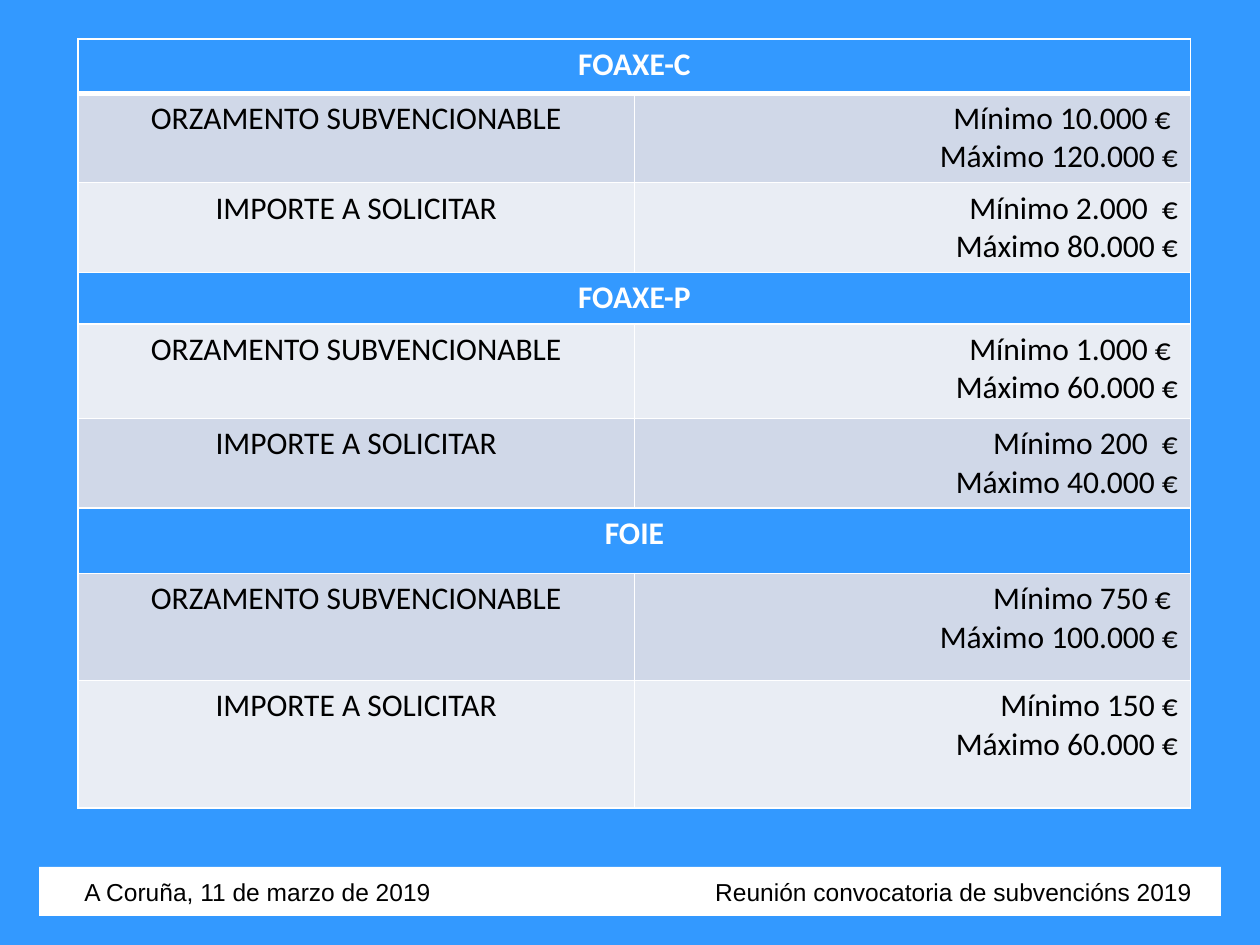
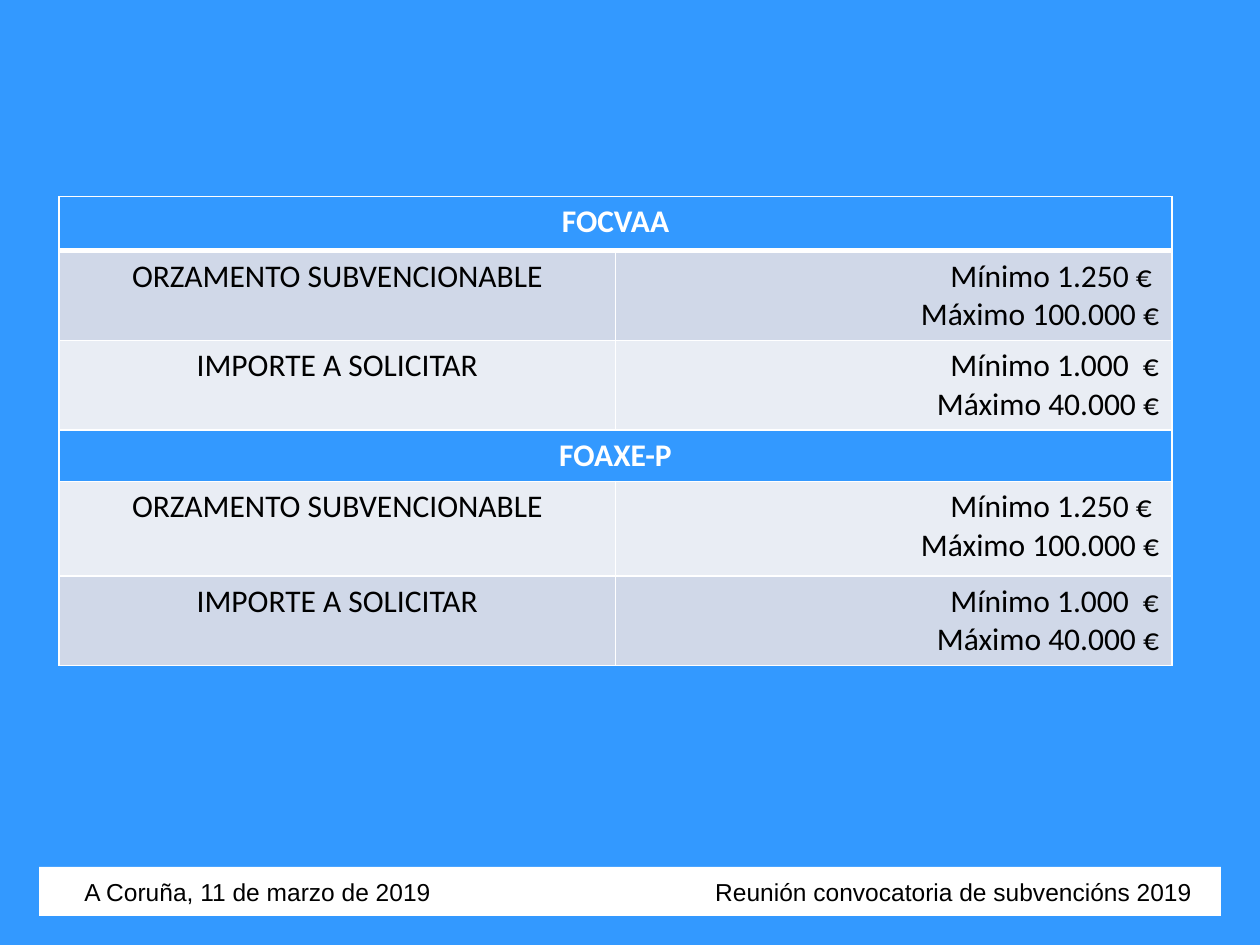
from lxml import etree
from pptx import Presentation
from pptx.dml.color import RGBColor
from pptx.enum.shapes import MSO_SHAPE
from pptx.enum.text import MSO_ANCHOR, PP_ALIGN
from pptx.oxml.ns import qn
from pptx.util import Inches, Pt

LEFT, CENTER, RIGHT = PP_ALIGN.LEFT, PP_ALIGN.CENTER, PP_ALIGN.RIGHT
MIDDLE = MSO_ANCHOR.MIDDLE
RECTANGLE = MSO_SHAPE.RECTANGLE

COLORS = {"blue": "3399FF", "white": "FFFFFF", "black": "000000",
          "dark_band": "D0D8E8", "light_band": "E9EDF4"}

BUDGET = "ORZAMENTO SUBVENCIONABLE"
REQUEST = "IMPORTE A SOLICITAR"
FOOTER = ("A Coruña, 11 de marzo de 2019", "Reunión convocatoria de subvencións 2019")

# Each programme: name, limits of the budget, limits of the amount requested
TABLES = [
    {"at": (0.62, 0.31),
     "heights": [0.43, 0.71, 0.71, 0.41, 0.75, 0.71, 0.52, 0.85, 1.01],
     "programmes": [
         ("FOAXE-C", ["Mínimo 10.000 € ", "Máximo 120.000 €"],
          ["Mínimo 2.000  €", "Máximo 80.000 €"]),
         ("FOAXE-P", ["Mínimo 1.000 € ", "Máximo 60.000 €"],
          ["Mínimo 200  €", "Máximo 40.000 €"]),
         ("FOIE", ["Mínimo 750 € ", "Máximo 100.000 €"],
          ["Mínimo 150 €", "Máximo 60.000 €"]),
     ]},
    {"at": (0.47, 1.56),
     "heights": [0.43, 0.71, 0.71, 0.41, 0.75, 0.71],
     "programmes": [
         (name, ["Mínimo 1.250 € ", "Máximo 100.000 €"],
          ["Mínimo 1.000  €", "Máximo 40.000 €"])
         for name in ("FOCVAA", "FOAXE-P")
     ]},
]

SLIDE_WIDTH, SLIDE_HEIGHT = 10, 7.5
TABLE_WIDTH = 8.83
FOOTER_MARGIN, FOOTER_TOP, FOOTER_HEIGHT = 0.31, 6.88, 0.39
FOOTER_INSET, FOOTER_TAB = 0.36, 8.79


def color(name):
    return RGBColor.from_string(COLORS[name])


def paint(fill, name):
    fill.solid()
    fill.fore_color.rgb = color(name)


def write(frame, lines, font="Calibri", size=18, ink="black", bold=False, align=LEFT):
    for index, line in enumerate(lines):
        para = frame.paragraphs[0] if index == 0 else frame.add_paragraph()
        para.alignment = align
        span = para.add_run()
        span.text = line
        span.font.name = font
        span.font.size = Pt(size)
        span.font.bold = bold
        span.font.color.rgb = color(ink)


def set_borders(cell, top=1, bottom=1):
    properties = cell._tc.get_or_add_tcPr()
    widths = {"a:lnL": 1, "a:lnR": 1, "a:lnT": top, "a:lnB": bottom}
    for index, (side, width) in enumerate(widths.items()):
        line = etree.Element(qn(side), w=str(Pt(width)))
        fill = etree.SubElement(line, qn("a:solidFill"))
        etree.SubElement(fill, qn("a:srgbClr"), val=COLORS["white"])
        properties.insert(index, line)


def add_limits_table(page, at, heights, programmes):
    rows = []
    for name, budget, request in programmes:
        rows += [(name, None), (BUDGET, budget), (REQUEST, request)]

    left, top = at
    table = page.shapes.add_table(
        len(rows), 2, Inches(left), Inches(top),
        Inches(TABLE_WIDTH), Inches(sum(heights))).table
    for column in table.columns:
        column.width = Inches(TABLE_WIDTH / 2)

    for number, (label, limits) in enumerate(rows):
        table.rows[number].height = Inches(heights[number])
        label_cell, limits_cell = table.cell(number, 0), table.cell(number, 1)
        band = "dark_band" if number % 2 else "light_band"
        for cell in (label_cell, limits_cell):
            paint(cell.fill, band if limits else "blue")
            set_borders(cell, top=3 if number == 1 else 1,
                        bottom=3 if number == 0 else 1)
        if limits:
            write(label_cell.text_frame, [label], align=CENTER)
            write(limits_cell.text_frame, limits, align=RIGHT)
        else:
            label_cell.merge(limits_cell)
            write(label_cell.text_frame, [label], ink="white", bold=True, align=CENTER)


def add_footer(page):
    """Add the white band, with place at the left and event at a right tab."""
    box = page.shapes.add_shape(
        RECTANGLE, Inches(FOOTER_MARGIN), Inches(FOOTER_TOP),
        Inches(SLIDE_WIDTH - 2 * FOOTER_MARGIN), Inches(FOOTER_HEIGHT))
    box.shadow.inherit = False
    paint(box.fill, "white")
    box.line.fill.background()
    frame = box.text_frame
    frame.word_wrap = True
    frame.vertical_anchor = MIDDLE
    frame.margin_left = Inches(FOOTER_INSET)
    write(frame, ["\t".join(FOOTER)], font="Arial", size=14)
    properties = frame.paragraphs[0]._p.get_or_add_pPr()
    tabs = etree.SubElement(properties, qn("a:tabLst"))
    etree.SubElement(tabs, qn("a:tab"), pos=str(Inches(FOOTER_TAB)), algn="r")


def main():
    deck = Presentation()
    deck.slide_width = Inches(SLIDE_WIDTH)
    deck.slide_height = Inches(SLIDE_HEIGHT)
    paint(deck.slide_master.background.fill, "blue")
    blank = deck.slide_layouts.get_by_name("Blank")
    for content in TABLES:
        page = deck.slides.add_slide(blank)
        add_limits_table(page, **content)
        add_footer(page)
    deck.save("out.pptx")


if __name__ == "__main__":
    main()
